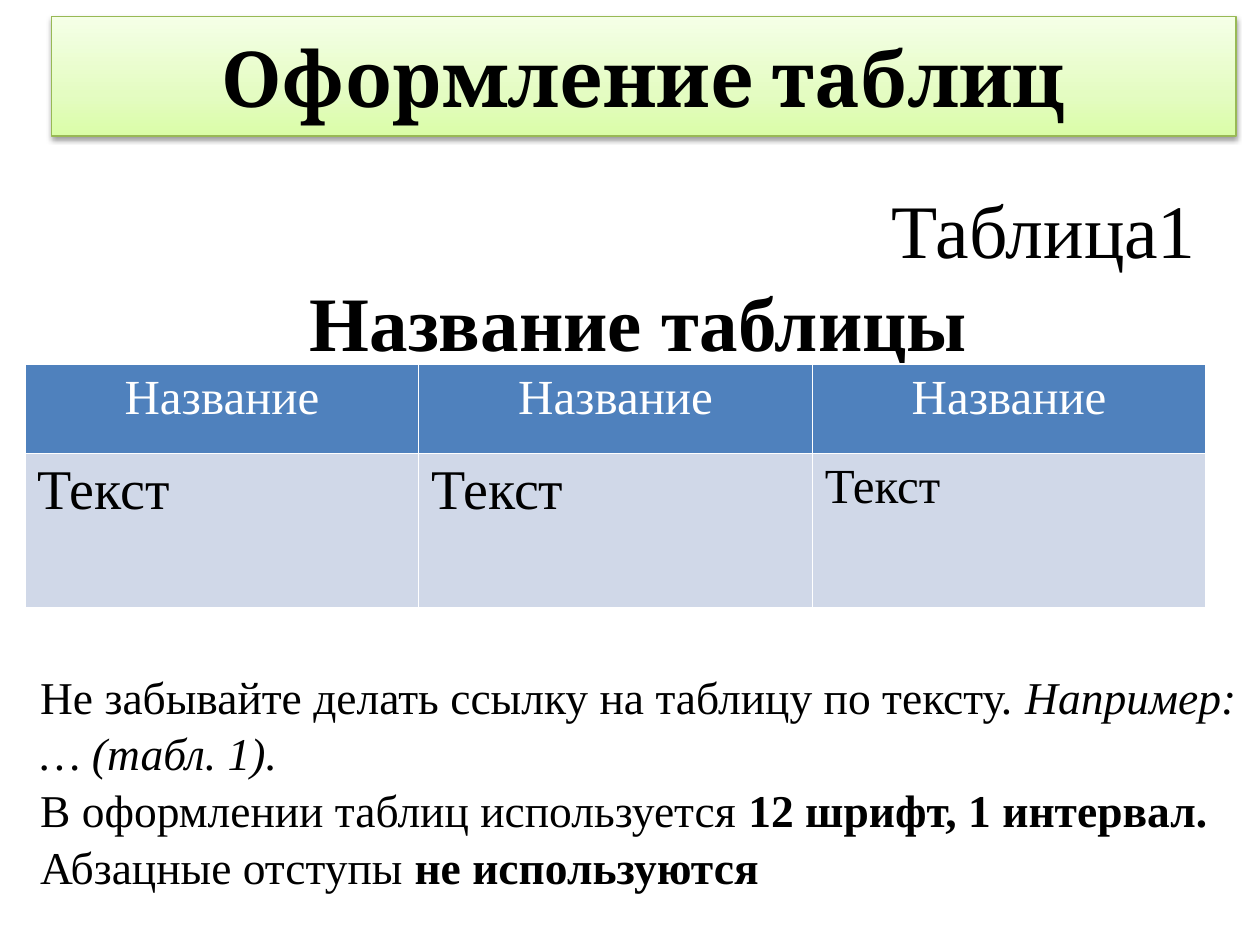
from dataclasses import dataclass

from lxml import etree
from pptx import Presentation
from pptx import util as u
from pptx.dml.color import RGBColor
from pptx.enum import shapes, text
from pptx.oxml import ns


@dataclass(frozen=True)
class Theme:
    serif: str = "Times New Roman"
    heading: str = "Cambria"
    black: str = "000000"
    white: str = "FFFFFF"
    header: str = "4F81BD"
    body: str = "D0D8E8"
    banner_line: str = "98B955"
    banner_stops: tuple = ((0, "DAFDA7"), (35, "E4FCC2"), (100, "F5FFE7"))
    title_size: float = 44
    caption_size: float = 43.2
    large_size: float = 32
    cell_size: float = 28
    note_size: float = 26


THEME = Theme()
ALIGN = text.PP_ALIGN


def assign(target, values):
    for name, value in values.items():
        setattr(target, name, value)


def add_node(parent, tag, **attributes):
    return etree.SubElement(parent, ns.qn(tag), attributes)


def add_span(para, words, size, font=THEME.serif, color=THEME.black, **style):
    span = para.add_run()
    span.text = words
    assign(span.font, {"size": u.Pt(size), "name": font, **style})
    span.font.color.rgb = RGBColor.from_string(color)


def add_text_box(page, area, paragraphs, size, para_format, frame_format=None):
    box = page.shapes.add_textbox(*map(u.Inches, area))
    frame = box.text_frame
    assign(frame, {"word_wrap": True, **(frame_format or {})})
    for index, spans in enumerate(paragraphs):
        para = frame.add_paragraph() if index else frame.paragraphs[0]
        assign(para, para_format)
        for words, style in spans:
            add_span(para, words, size, **style)


def add_banner(page, area, words):
    banner = page.shapes.add_shape(
        shapes.MSO_SHAPE.RECTANGLE, *map(u.Inches, area))
    banner.line.color.rgb = RGBColor.from_string(THEME.banner_line)
    banner.line.width = u.Pt(0.75)
    properties = banner.element.spPr

    gradient = etree.Element(ns.qn("a:gradFill"), rotWithShape="1")
    stops = add_node(gradient, "a:gsLst")
    for position, color in THEME.banner_stops:
        stop = add_node(stops, "a:gs", pos=str(position * 1000))
        add_node(stop, "a:srgbClr", val=color)
    add_node(gradient, "a:lin", ang=str(270 * 60000), scaled="1")
    properties.find(ns.qn("a:prstGeom")).addnext(gradient)

    effects = add_node(properties, "a:effectLst")
    shadow = add_node(
        effects, "a:outerShdw", blurRad=str(u.Pt(3.1)), dist=str(u.Pt(1.6)),
        dir=str(90 * 60000), rotWithShape="0")
    shade = add_node(shadow, "a:srgbClr", val=THEME.black)
    add_node(shade, "a:alpha", val="38000")

    frame = banner.text_frame
    assign(frame, {"word_wrap": True, "vertical_anchor": text.MSO_ANCHOR.MIDDLE})
    para = frame.paragraphs[0]
    para.alignment = ALIGN.CENTER
    add_span(para, words, THEME.title_size, font=THEME.heading, bold=True)


def add_borders(cell):
    properties = cell._tc.get_or_add_tcPr()
    for index, side in enumerate(("a:lnL", "a:lnR", "a:lnT", "a:lnB")):
        border = etree.Element(ns.qn(side), w=str(u.Pt(1)))
        add_node(add_node(border, "a:solidFill"), "a:srgbClr", val=THEME.white)
        properties.insert(index, border)


def add_sample_table(page, area, row_heights, rows):
    table = page.shapes.add_table(
        len(rows), len(rows[0][0]), *map(u.Inches, area)).table
    for column in table.columns:
        column.width = u.Inches(area[2] / len(table.columns))
    for row, height, (entries, fill, color, align) in zip(
            table.rows, row_heights, rows):
        row.height = u.Inches(height)
        for cell, (words, size) in zip(row.cells, entries):
            cell.fill.solid()
            cell.fill.fore_color.rgb = RGBColor.from_string(fill)
            add_borders(cell)
            para = cell.text_frame.paragraphs[0]
            para.alignment = align
            add_span(para, words, size, color=color, bold=False)


def main():
    deck = Presentation()
    assign(deck, {"slide_width": u.Inches(10), "slide_height": u.Inches(7.5)})
    page = deck.slides.add_slide(deck.slide_layouts[6])

    add_text_box(page, (0.2, 1.4, 9.39, 0.8), [[("Таблица1", {})]],
                 THEME.caption_size, {"alignment": ALIGN.RIGHT})
    add_banner(page, (0.41, 0.13, 9.4, 0.95), "Оформление таблиц")
    add_text_box(page, (1.96, 2.13, 6.22, 0.8),
                 [[("Название таблицы", {"bold": True})]],
                 THEME.title_size, {"alignment": ALIGN.CENTER})

    headings = [("Название", THEME.cell_size)] * 3
    samples = [("Текст", size) for size in
               (THEME.large_size, THEME.large_size, THEME.cell_size)]
    add_sample_table(page, (0.2, 2.89, 9.37, 1.93), (0.71, 1.22), (
        (headings, THEME.header, THEME.white, ALIGN.CENTER),
        (samples, THEME.body, THEME.black, ALIGN.LEFT)))

    notes = [
        [("Не забывайте делать ссылку на таблицу по тексту. ", {}),
         ("Например: … (табл. 1).", {"italic": True})],
        [("В оформлении таблиц используется ", {}),
         ("12 шрифт, 1 интервал. ", {"bold": True}),
         ("Абзацные отступы ", {}),
         ("не используются", {"bold": True})],
    ]
    add_text_box(page, (0.22, 4.79, 9.78, 2.29), notes, THEME.note_size,
                 {"line_spacing": 1.04}, {"margin_top": u.Inches(0.5)})
    deck.save("out.pptx")


if __name__ == "__main__":
    main()
